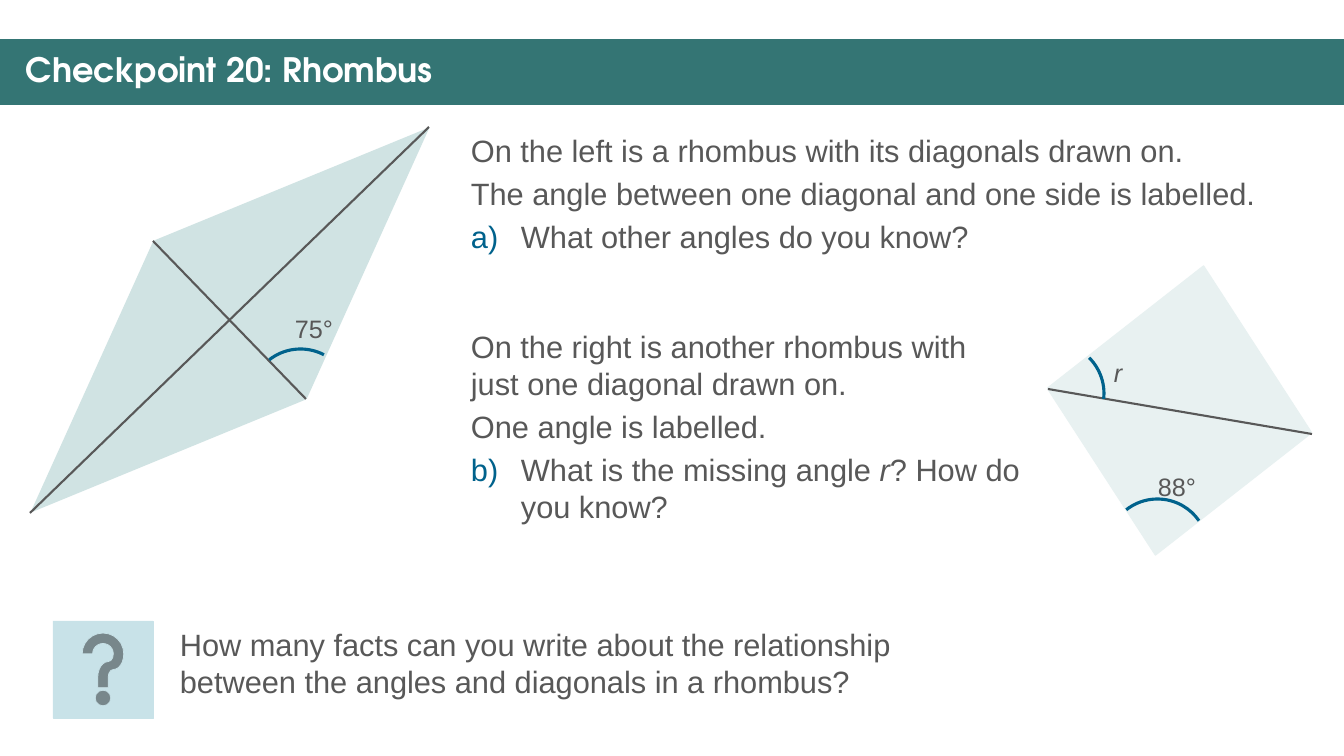
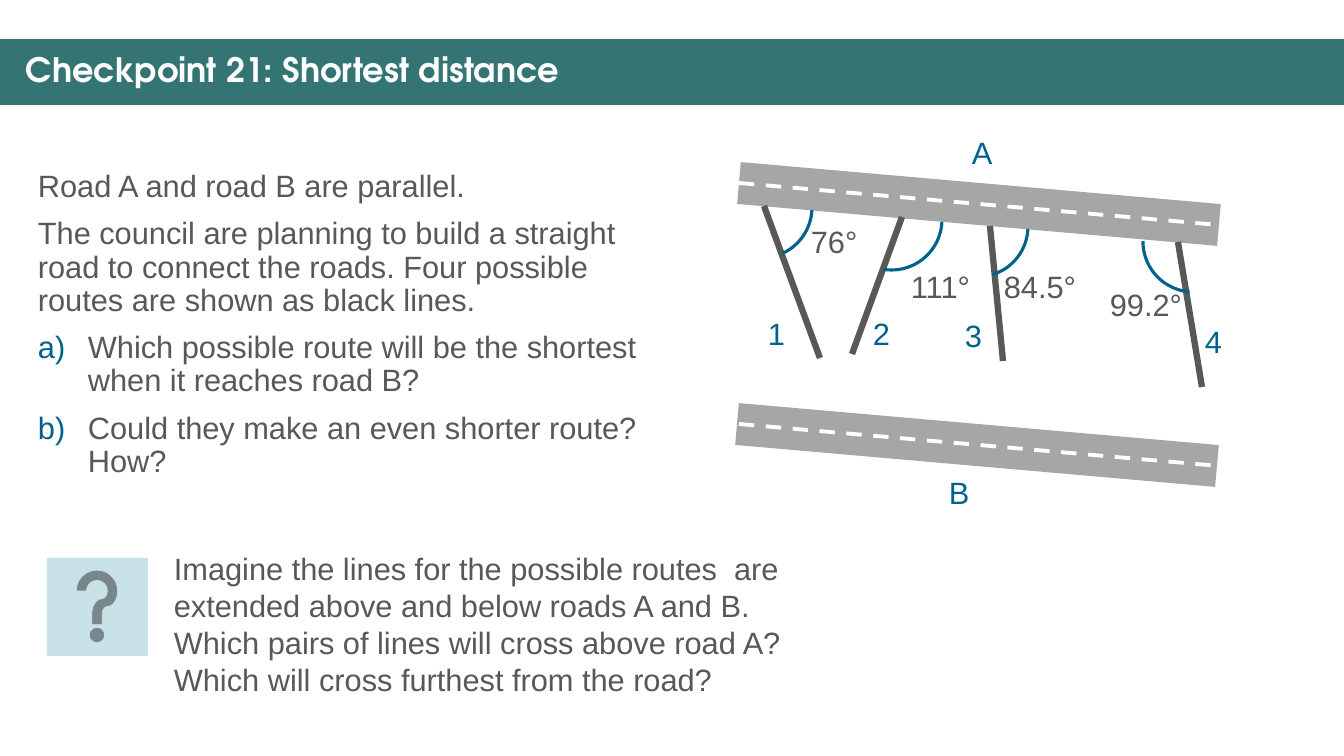
import pptx
import pptx.util
import pptx.dml.color
import pptx.enum.dml
import pptx.enum.shapes
import pptx.enum.text
import lxml.etree
import pptx.oxml.ns

Pt = pptx.util.Pt
KIND = pptx.enum.shapes.MSO_SHAPE
FIT = pptx.enum.text.MSO_AUTO_SIZE
ANCHOR = pptx.enum.text.MSO_ANCHOR
DASH = pptx.enum.dml.MSO_LINE.DASH
SCALE = 914400 / 100.8
WIDE, HIGH = 1344, 756
ARC = 101       # diameter of every angle arc
INDENT = 50     # hanging indent of lettered questions

HUES = {
    "band": "347574", "title": "FFFFFF", "text": "585858", "mark": "00628C",
    "deep": "D0E3E3", "pale": "E8F1F1", "help": "C8E2E8",
    "road": "A6A6A6", "dash": "FFFFFF",
}
HEAD = {"name": "TeX Gyre Adventor", "size": Pt(24), "bold": True}
BODY = {"name": "Arial", "size": Pt(22)}
SMALL = {"name": "Arial", "size": Pt(18)}
LOOSE = {"space_before": Pt(4.4)}
TIGHT = {"line_spacing": 0.9, "space_before": Pt(10)}


def px(*nums):
    return [pptx.util.Emu(round(n * SCALE)) for n in nums]


def hue(name):
    return pptx.dml.color.RGBColor.from_string(HUES[name])


def put(thing, form):
    for key, val in form.items():
        setattr(thing, key, val)


def add_sub(node, tag, **attrs):
    return lxml.etree.SubElement(node, pptx.oxml.ns.qn(tag), attrs)


# ---- basic parts ----
def shape(home, kind, box, fill=None, line=None, width=1, turn=0):
    item = home.shapes.add_shape(kind, *px(*box))
    item.shadow.inherit = False
    item.rotation = turn
    if fill:
        item.fill.solid()
        item.fill.fore_color.rgb = hue(fill)
    else:
        item.fill.background()
    if line:
        item.line.color.rgb = hue(line)
        item.line.width = Pt(width)
    else:
        item.line.fill.background()
    return item


def line(home, ends, tone="text", width=1.5, dash=None):
    item = home.shapes.add_connector(
        pptx.enum.shapes.MSO_CONNECTOR.STRAIGHT, *px(*ends))
    add_sub(item._element.spPr, "a:effectLst")
    item.line.color.rgb = hue(tone)
    put(item.line, {"width": Pt(width), "dash_style": dash})


def arc(home, x, y, start, end):
    item = shape(home, KIND.ARC, (x, y, ARC, ARC), line="mark", width=2.25)
    for i, deg in enumerate((start, end)):
        item.adjustments[i] = deg * 0.6  # 60000ths of a degree per 100000


def letter(para, start):
    props = para._p.get_or_add_pPr()
    for key, val in {"marL": INDENT, "indent": -INDENT}.items():
        props.set(key, str(px(val)[0]))
    tone = add_sub(props, "a:buClr")
    add_sub(tone, "a:srgbClr", val=HUES["mark"])
    add_sub(props, "a:buAutoNum", type="alphaLcParenR", startAt=str(start))


def text(home, box, paras, font=BODY, tone="text", space=LOOSE, **frame):
    """Each paragraph is (letter number or 0, plain, italic, plain, ...)."""
    area = home.shapes.add_textbox(*px(*box)).text_frame
    put(area, {"word_wrap": True, **frame})
    for i, (start, *parts) in enumerate(paras):
        para = area.paragraphs[0] if i == 0 else area.add_paragraph()
        if start:
            letter(para, start)
        put(para, space)
        if i == 0:
            para.space_before = Pt(0)
        for n, part in enumerate(parts):
            if part:
                run = para.add_run()
                run.text = part
                put(run.font, {**font, "italic": n % 2 == 1})
                run.font.color.rgb = hue(tone)


def label(home, box, *parts, **form):
    text(home, box, [(0, *parts)], word_wrap=False,
         auto_size=FIT.SHAPE_TO_FIT_TEXT, **form)


# ---- shared regions ----
def frame(deck, title):
    slide = deck.slides.add_slide(deck.slide_layouts[6])
    shape(slide, KIND.RECTANGLE, (0, 39, WIDE, 66), "band")
    text(slide, (16, 48, 1314, 47), [(0, title)], HEAD, "title", TIGHT,
         vertical_anchor=ANCHOR.MIDDLE)
    return slide


def prompt(slide, x, y, words, box):
    """Help button at x, y; box gives the text's place relative to it."""
    shape(slide, KIND.ACTION_BUTTON_HELP, (x, y, 100, 97), "help", "help", 0.5)
    left, top, wide, high = box
    text(slide, (x + left, y + top, wide, high), [(0, words)])


def rhomb(slide, x, y, tris, size, turn, fill, edge, lines, angles):
    """Two facing triangles, diagonals and labelled angles from x, y."""
    group = slide.shapes.add_group_shape()
    for i, (dx, dy) in enumerate(tris):
        shape(group, KIND.ISOSCELES_TRIANGLE, (x + dx, y + dy, *size),
              fill, edge, turn=turn + 180 * i)
    for x1, y1, x2, y2 in lines:
        line(group, (x + x1, y + y1, x + x2, y + y2))
    for (ax, ay, start, end), (tx, ty, wide), parts in angles:
        arc(group, x + ax, y + ay, start, end)
        label(group, (x + tx, y + ty, wide, 40), *parts, font=SMALL)


def roads(slide, x, y):
    """Two parallel roads and four routes, placed from x, y."""
    run, drop, tops = 480, 42, (54, 295)
    for tone, width, dash, shifts in (("road", 30, None, (4, 2)),
                                      ("dash", 2.75, DASH, (4, 4))):
        for top, dx in zip(tops, shifts):
            line(slide, (x + dx, y + top, x + dx + run, y + top + drop),
                 tone, width, dash)
    # route ends, arc, angle label, number place
    routes = [
        ((29, 77, 85, 229), (-24, 28, 2.8, 65.4), (66, 89, 68), "76°", (23, 181)),
        ((167, 88, 117, 225), (106, 40, 2.8, 99.4), (166, 134, 80), "111°", (128, 181)),
        ((255, 97, 268, 232), (192, 47, 2.8, 73.1), (259, 134, 94), "84.5°", (220, 183)),
        ((443, 113, 467, 258), (408, 62, 94.5, 180.5), (365, 152, 94), "99.2°", (460, 189)),
    ]
    for num, (ends, bend, spot, angle, place) in enumerate(routes, 1):
        x1, y1, x2, y2 = ends
        line(slide, (x + x1, y + y1, x + x2, y + y2), width=4.5)
        ax, ay, start, end = bend
        arc(slide, x + ax, y + ay, start, end)
        tx, ty, wide = spot
        label(slide, (x + tx, y + ty, wide, 47), angle)
        nx, ny = place
        label(slide, (x + nx, y + ny, 37, 47), str(num), tone="mark")
    for name, dx, dy in (("A", 227, 0), ("B", 204, 340)):
        label(slide, (x + dx, y + dy, 41, 47), name, tone="mark")


# ---- slides ----
def rhombus(deck):
    slide = frame(deck, "Checkpoint 20: Rhombus")
    text(slide, (461, 127, 837, 137), [
        (0, "On the left is a rhombus with its diagonals drawn on."),
        (0, "The angle between one diagonal and one side is labelled."),
        (1, "What other angles do you know?"),
    ])
    rhomb(slide, 20, 85, [(200, 0), (0, 193)], (220, 277), 46, "deep", None,
          [(133, 156, 286, 314), (10, 428, 409, 42)],
          [((230, 264, 231.8, 297.7), (265, 223, 58), ["75°"])])
    text(slide, (461, 323, 570, 212), [
        (0, "On the right is another rhombus with just one diagonal drawn on."),
        (0, "One angle is labelled."),
        (2, "What is the missing angle ", "r", "? How do you know?"),
    ])
    rhomb(slide, 1034, 265, [(24, 0), (0, 145)], (267, 146), 9.5, "pale", "pale",
          [(14, 124, 278, 169)],
          [((73, 234, 231.8, 325.3), (114, 201, 58), ["88°"]),
           ((-31, 78, 315, 6.1), (70, 87, 29), ["", "r"])])
    prompt(slide, 53, 621, "How many facts can you write about the relationship "
           "between the angles and diagonals in a rhombus?", (117, 0, 758, 85))


def distance(deck):
    slide = frame(deck, "Checkpoint 21: Shortest distance")
    text(slide, (28, 166, 658, 330), [
        (0, "Road A and road B are parallel."),
        (0, "The council are planning to build a straight road to connect the "
            "roads. Four possible routes are shown as black lines."),
        (1, "Which possible route will be the shortest when it reaches road B?"),
        (2, "Could they make an even shorter route? How?"),
    ], space=TIGHT)
    roads(slide, 735, 129)
    prompt(slide, 47, 558, "Imagine the lines for the possible routes  are "
           "extended above and below roads A and B. Which pairs of lines will "
           "cross above road A? Which will cross furthest from the road?",
           (117, -13, 671, 159))


def main():
    deck = pptx.Presentation()
    deck.slide_width, deck.slide_height = px(WIDE, HIGH)
    rhombus(deck)
    distance(deck)
    deck.save("out.pptx")


if __name__ == "__main__":
    main()
